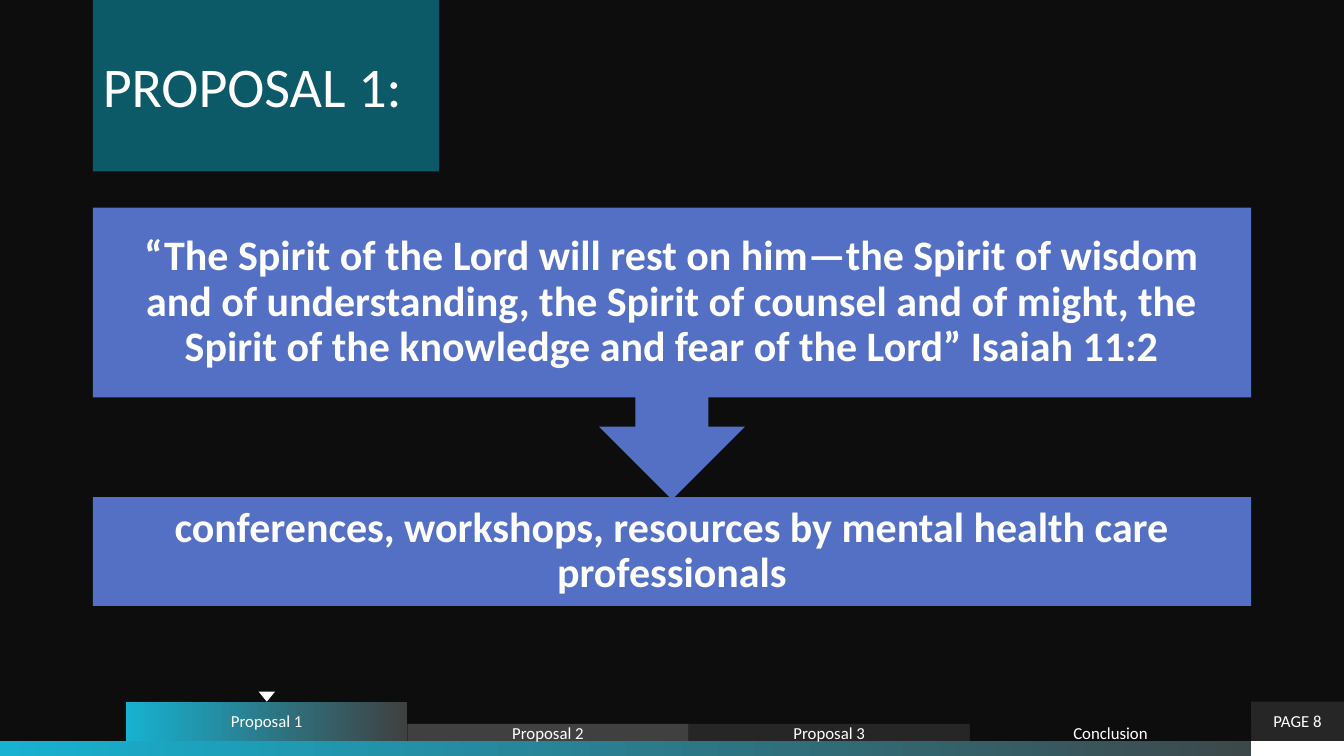
from dataclasses import dataclass

import pptx
import pptx.dml.color
import pptx.enum.shapes
import pptx.enum.text
import pptx.util

HEADING = "PROPOSAL 1:"
VERSE = (
    "“The Spirit of the Lord will rest on him—the Spirit of wisdom and of "
    "understanding, the Spirit of counsel and of might, the Spirit of the "
    "knowledge and fear of the Lord” Isaiah 11:2"
)
ACTION = "conferences, workshops, resources by mental health care professionals"
SECTIONS = ["Proposal 1", "Proposal 2", "Proposal 3", "Conclusion"]
PAGE = "PAGE 8"


@dataclass(frozen=True)
class Theme:
    font: str = "Calibri"
    ground: str = "0D0D0D"
    text: str = "FFFFFF"
    heading: str = "0C5968"
    block: str = "5370C5"
    page: str = "262626"
    glow: tuple = ("17B2D1", "404040")
    sections: tuple = (glow, "404040", "262626", ground)
    heading_size: int = 40
    block_size: int = 30
    nav_size: int = 12


THEME = Theme()
Cm = pptx.util.Cm
SHAPES = pptx.enum.shapes.MSO_SHAPE
ALIGN = pptx.enum.text.PP_ALIGN
rgb = pptx.dml.color.RGBColor.from_string

SLIDE_W, SLIDE_H = 33.87, 19.05
MARGIN = 2.34
BLOCK_W = SLIDE_W - 2 * MARGIN
BAR_H = 0.38
BAR_TOP = SLIDE_H - BAR_H
PAGE_LEFT = SLIDE_W - MARGIN
NAV_LEFT = 3.18
TAB_W = (PAGE_LEFT - NAV_LEFT) / len(SECTIONS)
ACTIVE_H, IDLE_H = 0.99, 0.43
MARKER_W, MARKER_H = 0.41, 0.25


def paint(shape, color):
    if isinstance(color, tuple):
        shape.fill.gradient()
        shape.fill.gradient_angle = 0
        for stop, shade in zip(shape.fill.gradient_stops, color):
            stop.color.rgb = rgb(shade)
    else:
        shape.fill.solid()
        shape.fill.fore_color.rgb = rgb(color)


def add_block(slide, kind, box, color):
    shape = slide.shapes.add_shape(kind, *map(Cm, box))
    shape.shadow.inherit = False
    shape.line.fill.background()
    paint(shape, color)
    return shape


def write(shape, text, size, align=ALIGN.CENTER, bold=False, inset=(0.25, 0.13)):
    frame = shape.text_frame
    frame.word_wrap = True
    frame.vertical_anchor = pptx.enum.text.MSO_ANCHOR.MIDDLE
    frame.margin_left = frame.margin_right = Cm(inset[0])
    frame.margin_top = frame.margin_bottom = Cm(inset[1])
    paragraph = frame.paragraphs[0]
    paragraph.alignment = align
    run = paragraph.add_run()
    run.text = text
    run.font.name = THEME.font
    run.font.size = pptx.util.Pt(size)
    run.font.bold = bold
    run.font.color.rgb = rgb(THEME.text)
    return paragraph


def add_heading(slide):
    heading = slide.shapes.title
    heading.left, heading.top = Cm(MARGIN), Cm(1)
    heading.width, heading.height = Cm(8.73), Cm(2.31)
    paint(heading, THEME.heading)
    write(heading, HEADING, THEME.heading_size, ALIGN.LEFT, inset=(0.25, 0.3))
    heading.text_frame.auto_size = pptx.enum.text.MSO_AUTO_SIZE.SHAPE_TO_FIT_TEXT


def add_flow(slide):
    steps = [
        (SHAPES.RECTANGLE, 12.53, 2.74, ACTION),
        (SHAPES.DOWN_ARROW_CALLOUT, 5.23, 7.36, VERSE),
    ]
    for kind, top, height, text in steps:
        step = add_block(slide, kind, (MARGIN, top, BLOCK_W, height), THEME.block)
        paragraph = write(step, text, THEME.block_size, bold=True, inset=(0.58, 0.58))
        paragraph.line_spacing = 0.9


def add_navigation(slide):
    add_block(slide, SHAPES.RECTANGLE, (0, BAR_TOP, SLIDE_W, BAR_H), THEME.glow)
    add_block(slide, SHAPES.RECTANGLE, (PAGE_LEFT, BAR_TOP, MARGIN, BAR_H), THEME.text)
    page_box = (PAGE_LEFT, BAR_TOP - ACTIVE_H, MARGIN, ACTIVE_H)
    page = add_block(slide, SHAPES.RECTANGLE, page_box, THEME.page)
    write(page, PAGE, THEME.nav_size)
    for index, (section, color) in enumerate(zip(SECTIONS, THEME.sections)):
        height = IDLE_H if index else ACTIVE_H
        tab_box = (NAV_LEFT + index * TAB_W, BAR_TOP - height, TAB_W, height)
        tab = add_block(slide, SHAPES.RECTANGLE, tab_box, color)
        write(tab, section, THEME.nav_size)
    marker_left = NAV_LEFT + (TAB_W - MARKER_W) / 2
    marker_top = BAR_TOP - ACTIVE_H - MARKER_H
    marker_box = (marker_left, marker_top, MARKER_W, MARKER_H)
    marker = add_block(slide, SHAPES.ISOSCELES_TRIANGLE, marker_box, THEME.text)
    marker.rotation = 180


def main():
    deck = pptx.Presentation()
    deck.slide_width, deck.slide_height = Cm(SLIDE_W), Cm(SLIDE_H)
    slide = deck.slides.add_slide(deck.slide_layouts.get_by_name("Title Only"))
    paint(slide.background, THEME.ground)
    add_heading(slide)
    add_navigation(slide)
    add_flow(slide)
    deck.save("out.pptx")


if __name__ == "__main__":
    main()
